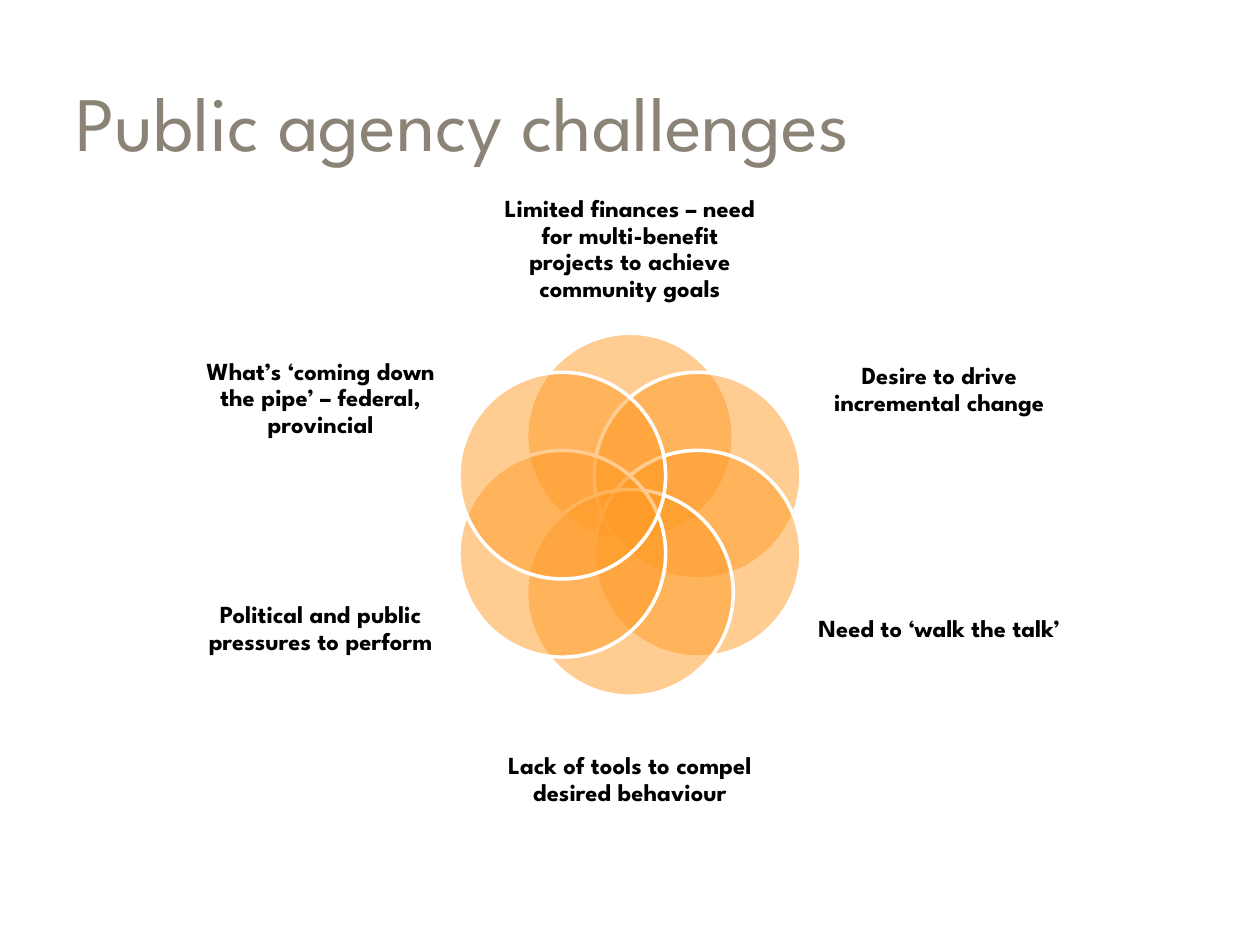
from math import cos, radians, sin

from lxml.etree import SubElement
from pptx import Presentation
from pptx.dml.color import RGBColor
from pptx.enum.shapes import MSO_SHAPE
from pptx.enum.text import MSO_ANCHOR, PP_ALIGN
from pptx.oxml.ns import qn
from pptx.util import Inches, Pt

FONT = "League Spartan"
HUES = {"title": "8B8376", "text": "000000", "disc": "FF9B26", "edge": "FFFFFF"}
LABELS = [
    ("Limited finances – need for multi-benefit projects to achieve community goals",
     2.4, 0, 2.06, 1.12),
    ("Desire to drive incremental change", 4.91, 1.06, 1.95, 1.23),
    ("Need to ‘walk the talk’", 4.91, 2.89, 1.95, 1.37),
    ("Lack of tools to compel desired behaviour", 2.4, 4.21, 2.06, 1.12),
    ("Political and public pressures to perform", 0, 2.89, 1.95, 1.37),
    ("What’s ‘coming down the pipe’ – federal, provincial", 0, 1.06, 1.95, 1.37),
]


def hue(name):
    """Return the named colour."""
    return RGBColor.from_string(HUES[name])


def add_text(shapes, text, box, size, color, bold=False):
    """Place one wrapped, vertically centred line of text and return its box."""
    item = shapes.add_textbox(*map(Inches, box))
    frame = item.text_frame
    frame.word_wrap = True
    frame.vertical_anchor = MSO_ANCHOR.MIDDLE
    run = frame.paragraphs[0].add_run()
    run.text = text
    font = run.font
    font.name, font.size, font.bold = FONT, Pt(size), bold
    font.color.rgb = hue(color)
    return item


def add_label(shapes, text, box):
    """Place a centred bold label without insets."""
    frame = add_text(shapes, text, box, 14, "text", True).text_frame
    frame.margin_left = frame.margin_right = 0
    frame.margin_top = frame.margin_bottom = 0
    para = frame.paragraphs[0]
    para.alignment = PP_ALIGN.CENTER
    para.line_spacing = 0.9


def add_disc(shapes, x, y, size):
    """Place a half-transparent disc centred on a point."""
    disc = shapes.add_shape(MSO_SHAPE.OVAL, Inches(x - size / 2),
                            Inches(y - size / 2), Inches(size), Inches(size))
    disc.shadow.inherit = False
    disc.fill.solid()
    disc.fill.fore_color.rgb = hue("disc")
    tint = disc.fill._xPr.find(qn("a:solidFill"))[0]
    SubElement(tint, qn("a:alpha"), val="50000")
    disc.line.color.rgb = hue("edge")
    disc.line.width = Pt(2)


def add_venn(slide, left, top, width, height):
    """Build the ring of six discs and their labels inside the box."""
    shapes = slide.shapes.add_group_shape().shapes
    mid_x, mid_y = left + width / 2, top + height / 2
    ring, size = 0.62, 1.64
    for i, (text, x, y, wide, high) in enumerate(LABELS):
        turn = radians(360 / len(LABELS) * i)
        add_disc(shapes, mid_x + ring * sin(turn), mid_y - ring * cos(turn), size)
        add_label(shapes, text, (left + x, top + y, wide, high))


def main():
    """Build and save the slide."""
    deck = Presentation()
    deck.slide_width, deck.slide_height = Inches(10), Inches(7.5)
    slide = deck.slides.add_slide(deck.slide_layouts[6])
    add_text(slide.shapes, "Public agency challenges", (0.5, 0.54, 9, 0.84), 44, "title")
    add_venn(slide, 1.57, 1.42, 6.86, 5.33)
    deck.save("out.pptx")


if __name__ == "__main__":
    main()
